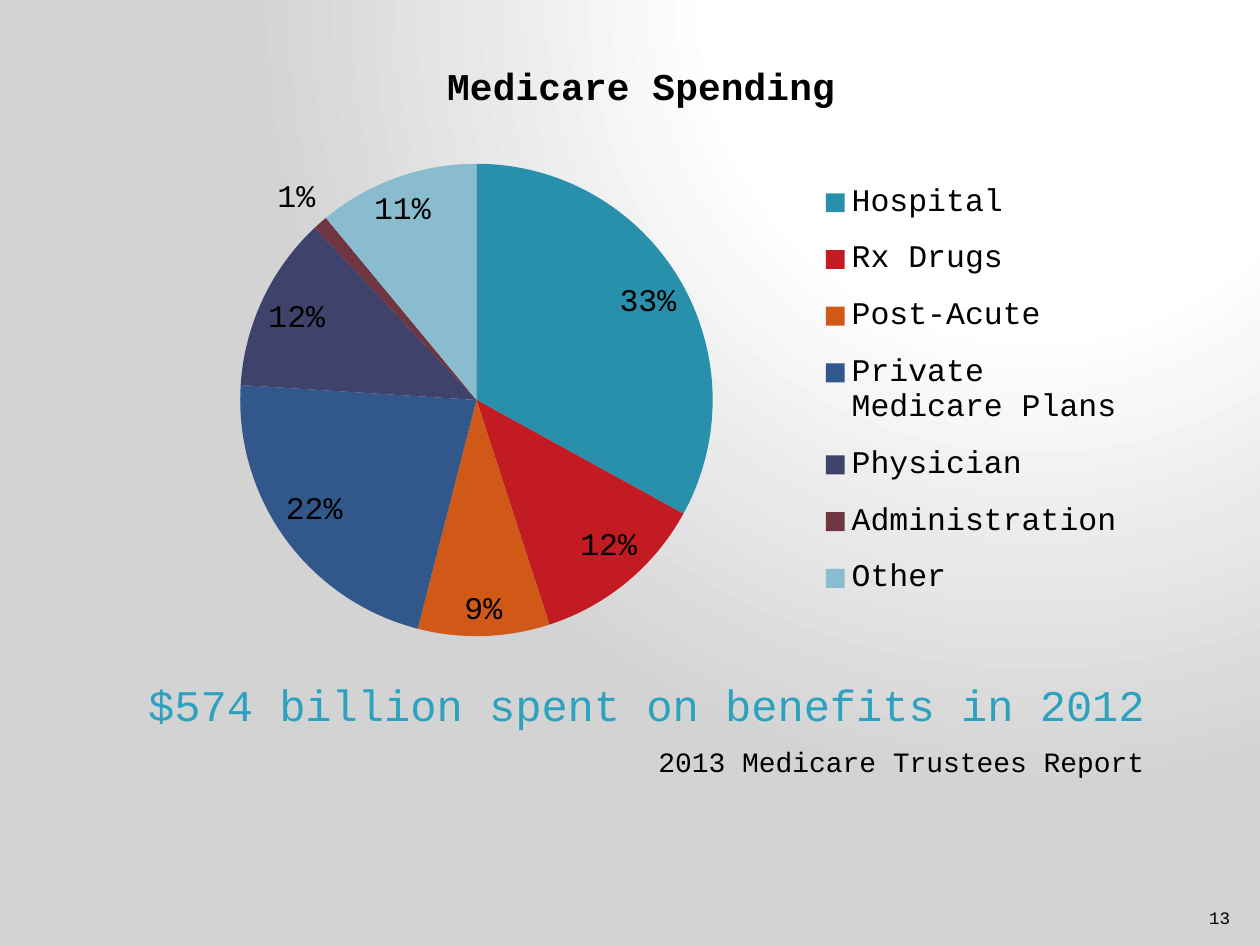
from lxml import etree
from pptx import Presentation
from pptx.chart.data import CategoryChartData
from pptx.dml.color import RGBColor as RGB
from pptx.enum.chart import XL_CHART_TYPE as Kind, XL_LABEL_POSITION as Spot
from pptx.enum.chart import XL_LEGEND_POSITION as Side
from pptx.enum.text import MSO_ANCHOR as Anchor, PP_ALIGN as Align
from pptx.oxml import parse_xml
from pptx.oxml.ns import nsdecls, qn
from pptx.util import Pt

FACE = "Courier New"
BLACK = RGB(0x00, 0x00, 0x00)
TEAL = RGB(0x2D, 0xA2, 0xBF)
SLICES = [
    ("Hospital", 0.33, RGB(0x28, 0x90, 0xAB)),
    ("Rx Drugs", 0.12, RGB(0xC2, 0x1B, 0x23)),
    ("Post-Acute", 0.09, RGB(0xD1, 0x59, 0x17)),
    ("Private Medicare Plans", 0.22, RGB(0x32, 0x58, 0x8B)),
    ("Physician", 0.12, RGB(0x3F, 0x42, 0x6A)),
    ("Administration", 0.01, RGB(0x6F, 0x35, 0x41)),
    ("Other", 0.11, RGB(0x8A, 0xBC, 0xCF)),
]


def write(box, text, size, color, anchor):
    frame = box.text_frame
    frame.text = text
    frame.word_wrap = True
    frame.vertical_anchor = anchor
    para = frame.paragraphs[0]
    para.alignment = Align.RIGHT
    font = para.runs[0].font
    font.name, font.size, font.bold = FACE, Pt(size), False
    font.color.rgb = color


def place(part, index, *spots, inner=False):
    old = part.find(qn("c:layout"))
    if old is not None:
        part.remove(old)
    layout = parse_xml(f"<c:layout {nsdecls('c')}><c:manualLayout/></c:layout>")
    pairs = [("layoutTarget", "inner")] if inner else []
    pairs += [("xMode", "edge"), ("yMode", "edge"), *zip("xywh", spots)]
    for tag, val in pairs:
        etree.SubElement(layout[0], qn("c:" + tag)).set("val", str(val))
    part.insert(index, layout)


prs = Presentation()
prs.slide_width, prs.slide_height = Pt(720), Pt(540)
slide = prs.slides.add_slide(prs.slide_layouts[5])

slide.background.fill.gradient()
grad = slide.element.xpath(".//a:gradFill")[0]
for child in list(grad):
    grad.remove(child)
stops = etree.SubElement(grad, qn("a:gsLst"))
for pos, tone in [(0, "FFFFFF"), (40, "FFFFFF"), (100, "D3D3D3")]:
    stop = etree.SubElement(stops, qn("a:gs"), pos=str(pos * 1000))
    etree.SubElement(stop, qn("a:srgbClr"), val=tone)
path = etree.SubElement(grad, qn("a:path"), path="circle")
etree.SubElement(path, qn("a:fillToRect"), l="65000", t="0", r="0", b="98000")

title = slide.shapes.title
title.left, title.top, title.width, title.height = Pt(72), Pt(384), Pt(589), Pt(36)
write(title, "$574 billion spent on benefits in 2012", 25, TEAL, Anchor.MIDDLE)

source = slide.shapes.add_textbox(Pt(348), Pt(422), Pt(313), Pt(72))
write(source, "2013 Medicare Trustees Report", 16, BLACK, Anchor.TOP)

data = CategoryChartData(number_format="0%")
data.categories = [name for name, share, color in SLICES]
data.add_series("Series 1", [share for name, share, color in SLICES])
chart = slide.shapes.add_chart(
    Kind.PIE, Pt(72), Pt(21.6), Pt(589), Pt(360), data).chart
chart.font.name, chart.font.size = FACE, Pt(18)
chart.font.color.rgb = BLACK

chart.has_title = True
head = chart.chart_title.text_frame
head.text = "Medicare Spending"
font = head.paragraphs[0].runs[0].font
font.name, font.size, font.bold = FACE, Pt(21.6), True
font.color.rgb = BLACK

plot = chart.plots[0]
plot.vary_by_categories = True
for i, (name, share, color) in enumerate(SLICES):
    fill = plot.series[0].points[i].format.fill
    fill.solid()
    fill.fore_color.rgb = color

plot.has_data_labels = True
labels = plot.data_labels
labels.show_value = True
labels.show_percentage = False
labels.number_format, labels.number_format_is_linked = "0%", False
labels.position = Spot.BEST_FIT

chart.has_legend = True
legend = chart.legend
legend.position = Side.RIGHT
legend.include_in_layout = False
root = chart.element
place(root.xpath(".//c:plotArea")[0], 0, 0.11, 0.2, 0.46, 0.75, inner=True)
place(root.xpath(".//c:legend")[0], 1, 0.67, 0.2, 0.3, 0.72)

number = slide.shapes.add_textbox(Pt(681), Pt(505), Pt(29), Pt(29))
write(number, "13", 10, BLACK, Anchor.BOTTOM)

prs.save("out.pptx")
